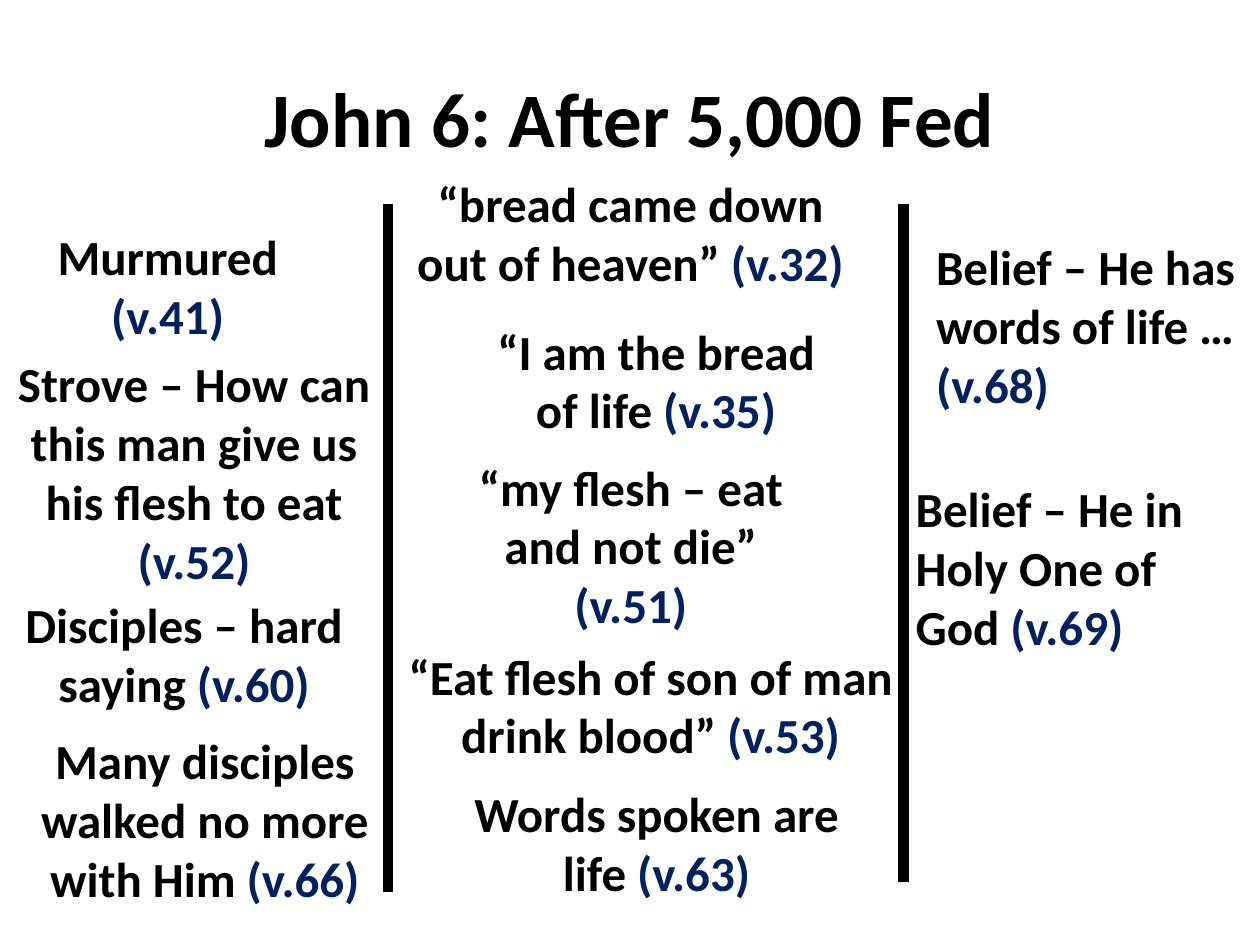
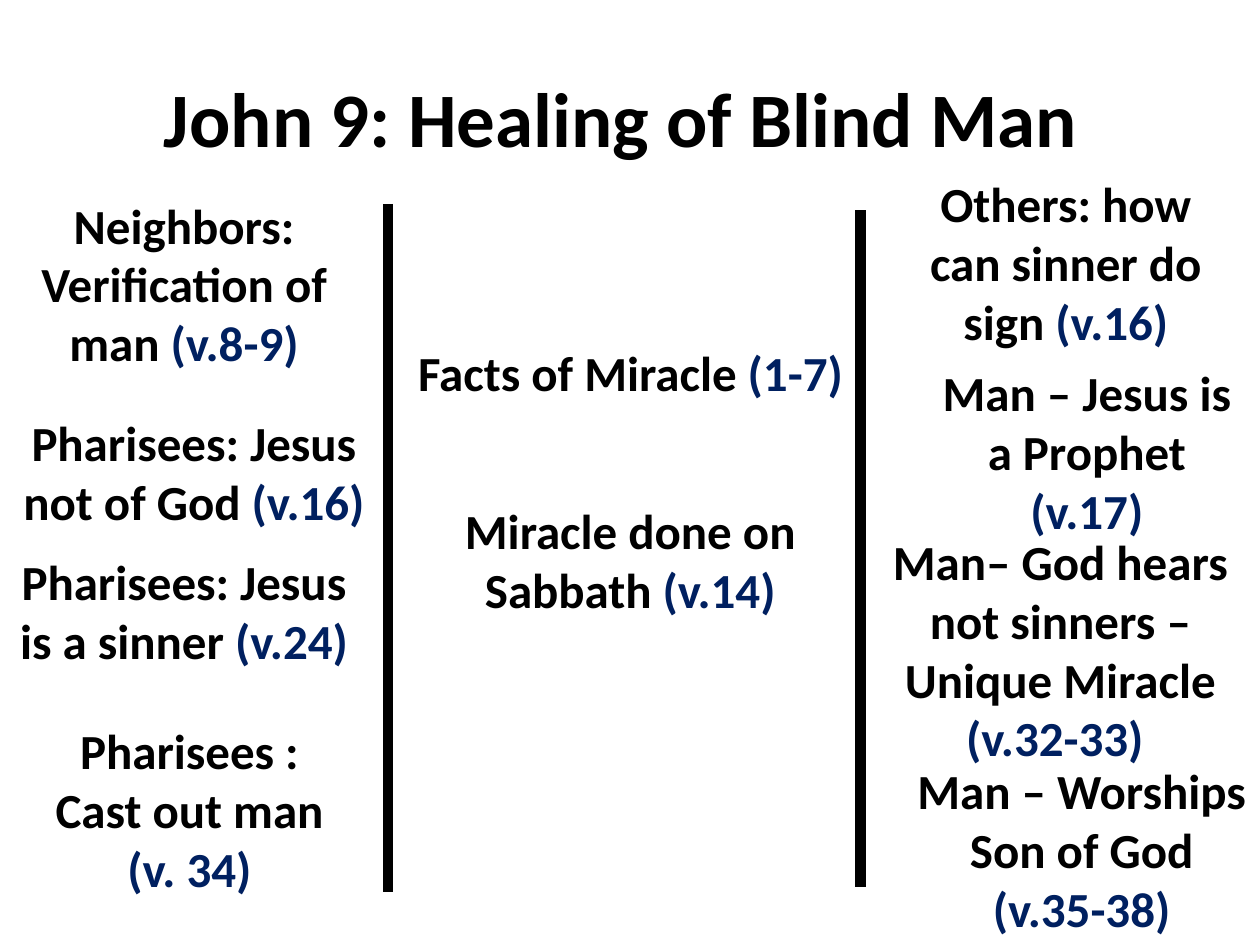
"""Build two three-column Bible study slides on John 6 and John 9."""
from dataclasses import dataclass

from lxml import etree
from pptx import Presentation, util as u
from pptx.dml.color import RGBColor
from pptx.enum import shapes, text
from pptx.oxml import ns


@dataclass(frozen=True)
class Theme:
    font: str = "Calibri"
    ink: str = "000000"
    verse: str = "002060"
    paper: str = "FFFFFF"
    title_size: int = 44
    note_size: int = 28
    rule_width: int = 6


def add_span(para, words, *, font, size, color, bold=True):
    span = para.add_run()
    span.text = words
    span.font.name = font
    span.font.size = u.Pt(size)
    span.font.bold = bold
    span.font.color.rgb = RGBColor.from_string(color)


class StudyDeck:
    LINE_HEIGHT = 1.2
    BOX_PADDING = 0.25

    def __init__(self, theme):
        self.theme = theme
        self.deck = Presentation()
        self.deck.slide_width, self.deck.slide_height = u.Cm(25.4), u.Cm(19.05)
        self.page = None

    def add_page(self, title):
        theme = self.theme
        self.page = self.deck.slides.add_slide(self.deck.slide_layouts.get_by_name("Title Only"))
        fill = self.page.background.fill
        fill.solid()
        fill.fore_color.rgb = RGBColor.from_string(theme.paper)
        box = self.page.shapes.title
        box.left, box.top, box.width, box.height = map(u.Cm, (1.27, 0.76, 22.86, 3.18))
        box.text_frame.vertical_anchor = text.MSO_ANCHOR.MIDDLE
        para = box.text_frame.paragraphs[0]
        para.alignment = text.PP_ALIGN.CENTER
        add_span(para, title, font=theme.font, size=theme.title_size, color=theme.ink)

    def add_divider(self, x, top, bottom):
        line = self.page.shapes.add_connector(
            shapes.MSO_CONNECTOR.STRAIGHT, u.Cm(x), u.Cm(top), u.Cm(x), u.Cm(bottom))
        line.line.width = u.Pt(self.theme.rule_width)
        line.line.color.rgb = RGBColor.from_string(self.theme.ink)
        etree.SubElement(line._element.spPr, ns.qn("a:effectLst"))

    def add_note(self, words, verse, left, top, width, lines, align=text.PP_ALIGN.CENTER):
        theme = self.theme
        height = self.BOX_PADDING + self.LINE_HEIGHT * lines
        box = self.page.shapes.add_textbox(*map(u.Cm, (left, top, width, height)))
        frame = box.text_frame
        frame.word_wrap = True
        frame.auto_size = text.MSO_AUTO_SIZE.SHAPE_TO_FIT_TEXT
        para = frame.paragraphs[0]
        para.alignment = align
        add_span(para, words + " ", font=theme.font, size=theme.note_size, color=theme.ink)
        add_span(para, verse, font=theme.font, size=theme.note_size, color=theme.verse)

    def save(self):
        self.deck.save("out.pptx")


LEFT = text.PP_ALIGN.LEFT
PAGES = [
    ("John 6: After 5,000 Fed",
     [(7.82, 4.11, 17.98), (18.21, 4.11, 17.78)],
     [("Murmured", "(v.41)", 0.84, 4.45, 5.08, 2),
      ("Strove – How can this man give us his flesh to eat", "(v.52)", 0, 7.01, 7.82, 4),
      ("Disciples – hard saying", "(v.60)", 0, 11.86, 7.42, 2),
      ("Many disciples walked no more with Him", "(v.66)", 0, 14.61, 8.26, 3),
      ("“bread came down out of heaven”", "(v.32)", 8.05, 3.38, 9.32, 2),
      ("“I am the bread of life", "(v.35)", 9.73, 6.35, 6.99, 2),
      ("“my flesh – eat and not die”", "(v.51)", 8.69, 9.09, 8.05, 3),
      ("“Eat flesh of son of man drink blood”", "(v.53)", 7.82, 12.9, 10.59, 2),
      ("Words spoken are life", "(v.63)", 8.89, 15.67, 8.69, 2),
      ("Belief – He has words of life …", "(v.68)", 18.62, 4.65, 6.78, 3, LEFT),
      ("Belief – He in Holy One of God", "(v.69)", 18.21, 9.53, 7.19, 3, LEFT)]),
    ("John 9: Healing of Blind Man ",
     [(7.82, 4.11, 17.98), (17.35, 4.24, 17.88)],
     [("Neighbors: Verification of man", "(v.8-9)", 0, 3.81, 7.42, 3),
      ("Pharisees: Jesus not of God", "(v.16)", 0, 8.2, 7.82, 2),
      ("Pharisees: Jesus is a sinner", "(v.24)", 0, 11, 7.42, 2),
      ("Pharisees : Cast out man", "(v. 34)", 0.43, 14.4, 6.78, 3),
      ("Facts of Miracle", "(1-7)", 8.05, 6.78, 9.32, 1),
      ("Miracle done on Sabbath", "(v.14)", 8.26, 9.96, 8.89, 2),
      ("Others: how can sinner do sign", "(v.16)", 18.21, 3.38, 6.55, 3),
      ("Man – Jesus is a Prophet", "(v.17)", 18.42, 7.19, 6.98, 3),
      ("Man– God hears not sinners – Unique Miracle", "(v.32-33) ", 17.35, 10.59, 8.05, 4),
      ("Man – Worships Son of God", "(v.35-38)", 18.21, 15.21, 7.19, 3)]),
]


def main():
    study = StudyDeck(Theme())
    for title, dividers, notes in PAGES:
        study.add_page(title)
        for divider in dividers:
            study.add_divider(*divider)
        for note in notes:
            study.add_note(*note)
    study.save()


if __name__ == "__main__":
    main()
